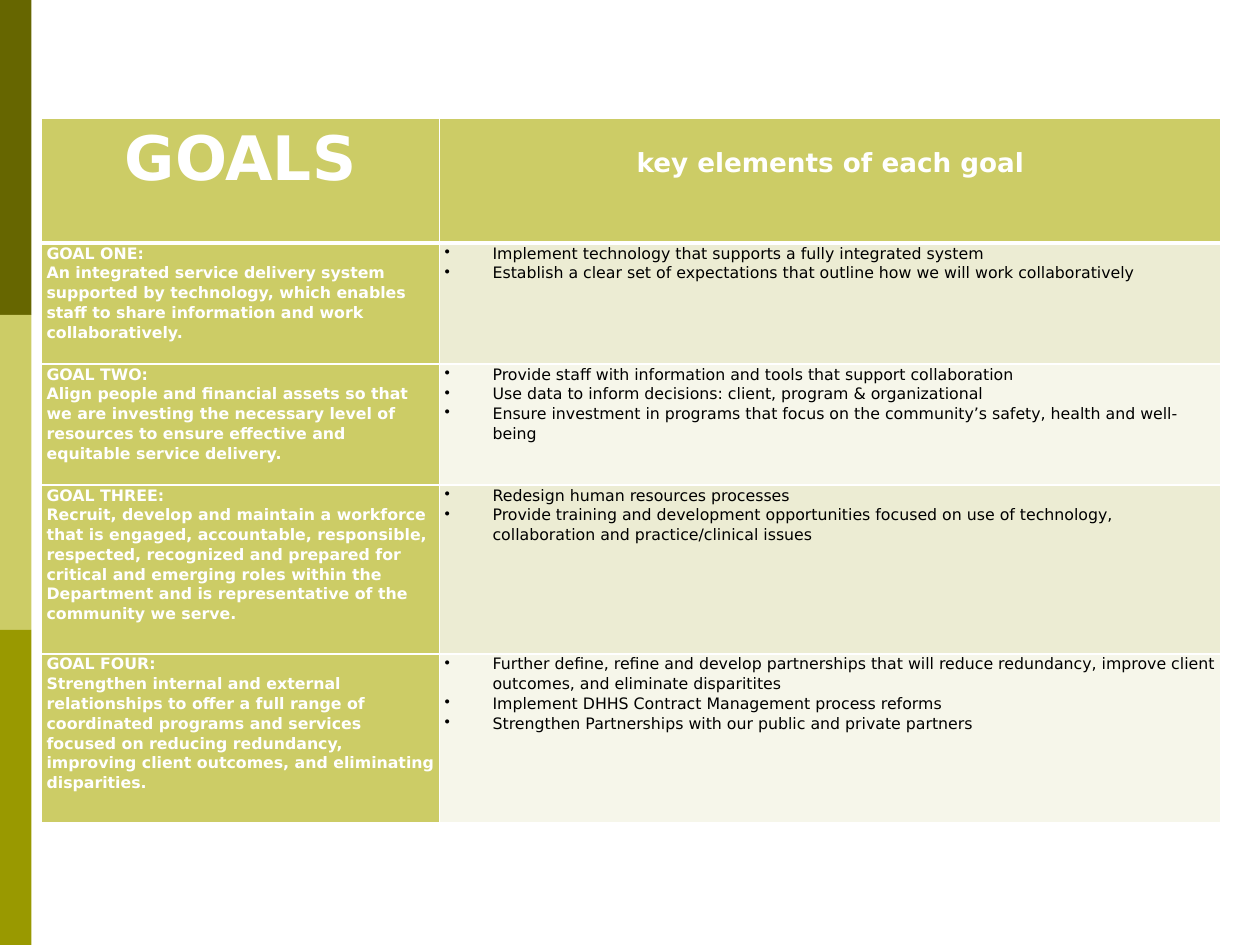
from lxml import etree
from pptx import Presentation
from pptx.dml.color import RGBColor
from pptx.enum.shapes import MSO_SHAPE
from pptx.enum.text import PP_ALIGN
from pptx.oxml.ns import qn
from pptx.util import Inches, Pt

RECT = MSO_SHAPE.RECTANGLE
CENTER = PP_ALIGN.CENTER
LEFT = PP_ALIGN.LEFT
FONT = "DejaVu Sans"
COLORS = {"dark": "666600", "light": "CCCC66", "mid": "999900",
          "odd": "ECECD3", "even": "F6F6EA", "white": "FFFFFF", "black": "000000"}
COL_WIDTHS = [3.16, 6.2]
ROW_HEIGHTS = [0.99, 0.96, 0.96, 1.34, 1.34]
GOALS = [
    ("GOAL ONE:",
     "An integrated service delivery system supported by technology, which enables "
     "staff to share information and work collaboratively.",
     ["Implement technology that supports a fully integrated system",
      "Establish a clear set of expectations that outline how we will work collaboratively"]),
    ("GOAL TWO:",
     "Align people and financial assets so that we are investing the necessary level of "
     "resources to ensure effective and equitable service delivery.",
     ["Provide staff with information and tools that support collaboration",
      "Use data to inform decisions: client, program & organizational",
      "Ensure investment in programs that focus on the community’s safety, health and well-being"]),
    ("GOAL THREE:",
     "Recruit, develop and maintain a workforce that is engaged, accountable, responsible, "
     "respected, recognized and prepared for critical and emerging roles within the "
     "Department and is representative of the community we serve.",
     ["Redesign human resources processes",
      "Provide training and development opportunities focused on use of technology, "
      "collaboration and practice/clinical issues"]),
    ("GOAL FOUR:",
     "Strengthen internal and external relationships to offer a full range of coordinated "
     "programs and services focused on reducing redundancy, improving client outcomes, "
     "and eliminating disparities.",
     ["Further define, refine and develop partnerships that will reduce redundancy, "
      "improve client outcomes, and eliminate disparitites",
      "Implement DHHS Contract Management process reforms",
      "Strengthen Partnerships with our public and private partners"]),
]


def rgb(name):
    """Return the named colour."""
    return RGBColor.from_string(COLORS[name])


def add_band(slide, top, color):
    """Add one block of the left side strip."""
    sp = slide.shapes.add_shape(RECT, 0, Inches(top), Inches(0.25), Inches(2.5))
    sp.shadow.inherit = False
    sp.fill.solid()
    sp.fill.fore_color.rgb = rgb(color)
    sp.line.fill.background()


def set_borders(cell, top=1, bottom=1):
    """Draw white borders of the given point widths."""
    tc_pr = cell._tc.get_or_add_tcPr()
    sides = [("a:lnL", 1), ("a:lnR", 1), ("a:lnT", top), ("a:lnB", bottom)]
    for i, (tag, width) in enumerate(sides):
        ln = etree.Element(qn(tag), w=str(Pt(width)))
        fill = etree.SubElement(ln, qn("a:solidFill"))
        etree.SubElement(fill, qn("a:srgbClr"), val=COLORS["white"])
        tc_pr.insert(i, ln)


def set_bullet(p):
    """Give a paragraph a hanging bullet."""
    p_pr = p._p.get_or_add_pPr()
    p_pr.set("marL", str(Inches(0.38)))
    p_pr.set("indent", str(-Inches(0.38)))
    bullet = etree.Element(qn("a:buChar"), char="•")
    p_pr.insert_element_before(bullet, "a:tabLst", "a:defRPr", "a:extLst")


def fill_cell(cell, lines, fill, size=9, color="white", bold=True,
              align=LEFT, bullets=False, margin_top=0):
    """Write and format the paragraphs of a table cell."""
    cell.fill.solid()
    cell.fill.fore_color.rgb = rgb(fill)
    cell.margin_left = cell.margin_right = Inches(0.04)
    cell.margin_top, cell.margin_bottom = Inches(margin_top), 0
    tf = cell.text_frame
    tf.text = "\n".join(lines)
    for p in tf.paragraphs:
        p.alignment = align
        p.line_spacing = 1.07
        p.font.name = FONT
        p.font.size = Pt(size)
        p.font.bold = bold
        p.font.color.rgb = rgb(color)
        if bullets:
            set_bullet(p)


def add_goal_table(slide):
    """Add the table of goals and their key elements."""
    table = slide.shapes.add_table(
        len(ROW_HEIGHTS), len(COL_WIDTHS), Inches(0.33), Inches(0.94),
        Inches(sum(COL_WIDTHS)), Inches(sum(ROW_HEIGHTS))).table
    for col, width in zip(table.columns, COL_WIDTHS):
        col.width = Inches(width)
    for row, height in zip(table.rows, ROW_HEIGHTS):
        row.height = Inches(height)
    fill_cell(table.cell(0, 0), ["GOALS"], "light", 35, align=CENTER)
    fill_cell(table.cell(0, 1), ["key elements of each goal"], "light", 15,
              align=CENTER, margin_top=0.22)
    for i, (name, aim, elements) in enumerate(GOALS, 1):
        fill_cell(table.cell(i, 0), [name, aim], "light")
        fill_cell(table.cell(i, 1), elements, "odd" if i % 2 else "even",
                  color="black", bold=False, bullets=True)
    for i, row in enumerate(table.rows):
        for cell in row.cells:
            set_borders(cell, top=3 if i == 1 else 1, bottom=3 if i == 0 else 1)


def main():
    """Build and save the slide."""
    prs = Presentation()
    prs.slide_width, prs.slide_height = Inches(10), Inches(7.5)
    slide = prs.slides.add_slide(prs.slide_layouts[6])
    for i, color in enumerate(["dark", "light", "mid"]):
        add_band(slide, 2.5 * i, color)
    add_goal_table(slide)
    prs.save("out.pptx")


if __name__ == "__main__":
    main()
